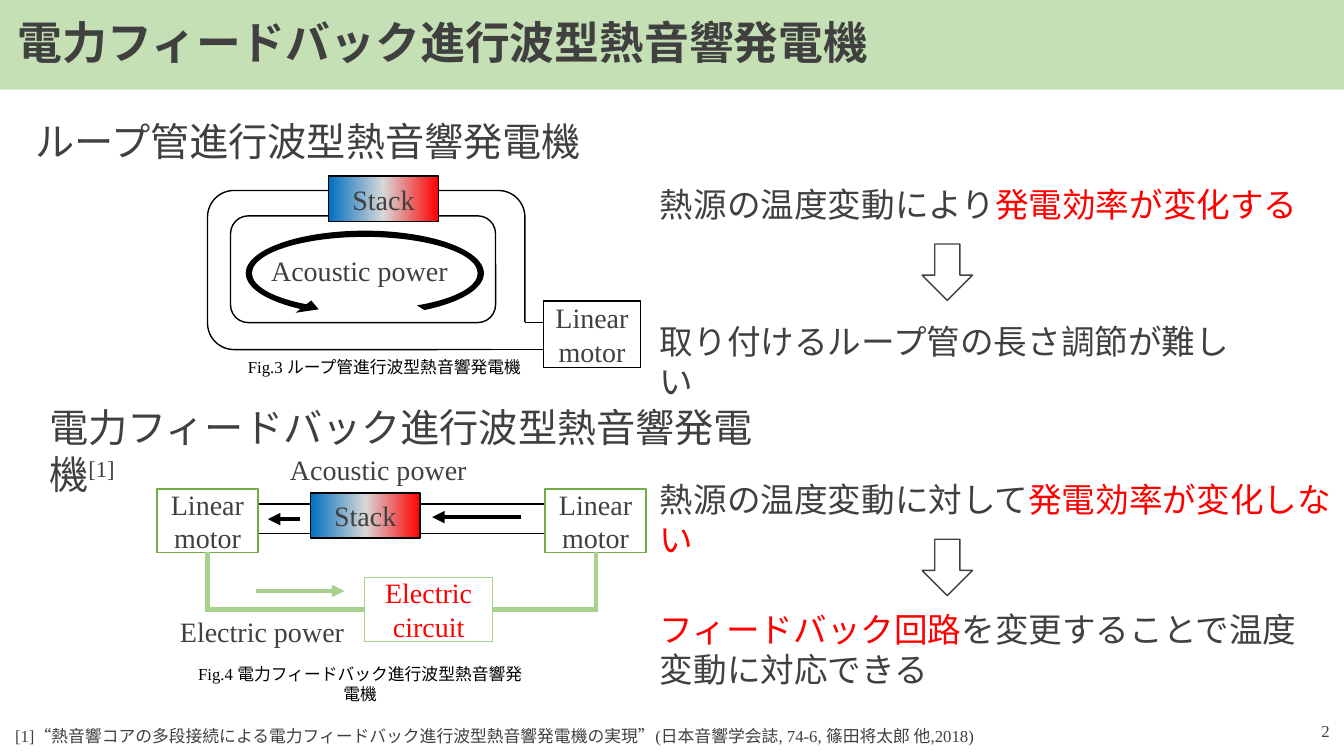
from copy import deepcopy

from lxml.etree import SubElement
from pptx import Presentation
from pptx.dml.color import RGBColor
from pptx.enum.shapes import MSO_CONNECTOR, MSO_SHAPE
from pptx.enum.text import MSO_ANCHOR, MSO_AUTO_SIZE, PP_ALIGN
from pptx.oxml.ns import qn
from pptx.util import Cm, Pt

LATIN, JAPANESE = "Times New Roman", "Noto Sans CJK JP"
GRAY, BLACK, WHITE, RED = "404040", "000000", "FFFFFF", "FF0000"
PALE_GREEN, WIRE_GREEN, MOTOR_GREEN = "C5E0B4", "A9D18E", "70AD47"
STACK_COLORS = ("0070C0", "D7D7D7", RED)
STACK_SIZE = (2.77, 1.14)


def color(value):
    return RGBColor.from_string(value)


def inside(box, x, y, width, height):
    """Box at an offset from the corner of another box, in cm."""
    return box[0] + x, box[1] + y, width, height


# Basic parts
def write(frame, lines, size, ink=GRAY, align=PP_ALIGN.LEFT, font=LATIN, bold=False):
    """Each line is a string or a list of (text, colour) runs."""
    frame.word_wrap = True
    for index, line in enumerate(lines):
        paragraph = frame.add_paragraph() if index else frame.paragraphs[0]
        paragraph.alignment = align
        paragraph.font.size = Pt(size)
        paragraph.font.bold = bold
        paragraph.font.color.rgb = color(ink)
        paragraph.font.name = font
        defaults = paragraph._p.pPr.find(qn("a:defRPr"))
        SubElement(defaults, qn("a:ea")).set("typeface", JAPANESE)
        for text, run_ink in [(line, ink)] if isinstance(line, str) else line:
            run = paragraph.add_run()
            run.text = text
            if run_ink != ink:
                run.font.color.rgb = color(run_ink)


def add_text(slide, box, line, size, **style):
    textbox = slide.shapes.add_textbox(*map(Cm, box))
    write(textbox.text_frame, [line], size, **style)
    textbox.text_frame.auto_size = MSO_AUTO_SIZE.SHAPE_TO_FIT_TEXT
    return textbox


def add_label(slide, box, line, size=20, ink=GRAY):
    return add_text(slide, box, line, size, ink=ink, align=PP_ALIGN.CENTER)


def add_block(slide, box, preset=MSO_SHAPE.RECTANGLE, fill=None, line=None,
              lines=(), ink=GRAY):
    shape = slide.shapes.add_shape(preset, *map(Cm, box))
    shape.shadow.inherit = False
    if fill:
        shape.fill.solid()
        shape.fill.fore_color.rgb = color(fill)
    else:
        shape.fill.background()
    if line:
        shape.line.color.rgb = color(line)
        shape.line.width = Pt(1)
    else:
        shape.line.fill.background()
    if lines:
        shape.text_frame.vertical_anchor = MSO_ANCHOR.MIDDLE
        write(shape.text_frame, lines, 20, ink=ink, align=PP_ALIGN.CENTER)
    return shape


def add_line(slide, box, start, end, ink=BLACK, width=1.0, arrow=False):
    points = (box[0] + start[0], box[1] + start[1], box[0] + end[0], box[1] + end[1])
    connector = slide.shapes.add_connector(MSO_CONNECTOR.STRAIGHT, *map(Cm, points))
    connector.line.color.rgb = color(ink)
    connector.line.width = Pt(width)
    if arrow:
        SubElement(connector.line._get_or_add_ln(), qn("a:tailEnd")).set("type", "triangle")
    SubElement(connector.element.spPr, qn("a:effectLst"))
    return connector


def add_motor(slide, box, line, fill=None):
    return add_block(slide, box, fill=fill, line=line, lines=["Linear", "motor"])


def add_stack(slide, box):
    stack = add_block(slide, box, line=BLACK, lines=["Stack"])
    stack.fill.gradient()
    stack.fill.gradient_angle = 0
    stop_list = stack.element.spPr.find(qn("a:gradFill")).find(qn("a:gsLst"))
    stop_list.insert(1, deepcopy(stop_list[0]))
    for index, stop in enumerate(stack.fill.gradient_stops):
        stop.color.rgb = color(STACK_COLORS[index])
        stop.position = index / 2


# Regions of the slide
def add_title_bar(slide, box, title):
    add_block(slide, box, fill=PALE_GREEN)
    add_text(slide, inside(box, 0.2, 0.25, 22.86, 1.63), title, 32,
             font=JAPANESE, bold=True)


def add_loop_diagram(slide, box, caption):
    motor_x = box[2] - 2.46
    mouth_top, tube_bottom = 3.33, 4.01
    # Looped tube, opened at its lower right corner
    for tube in ((0.58, 0.64, 6.68, 2.69), (0, 0, 8, tube_bottom)):
        add_block(slide, inside(box, *tube), MSO_SHAPE.ROUNDED_RECTANGLE, line=BLACK)
    add_block(slide, inside(box, 7.16, mouth_top, 1.4, 0.71), fill=WHITE, line=WHITE)
    add_motor(slide, inside(box, motor_x, 2.79, 2.46, 1.68), BLACK)
    add_stack(slide, inside(box, 3.05, -0.36, *STACK_SIZE))
    for x, y in ((7.14, tube_bottom), (8, mouth_top)):
        add_line(slide, box, (x, y), (motor_x, y))
    # Circulating power
    add_label(slide, inside(box, 1.14, 1.47, 5.38, 1.12), "Acoustic power")
    flow = add_block(slide, inside(box, 2.72, -1.09, 2.49, 6.35),
                     MSO_SHAPE.CIRCULAR_ARROW, fill=BLACK)
    for index, value in enumerate((0.063, 5.727, 179.133, 34.979, 0.101)):
        flow.adjustments[index] = value
    flow.rotation = 270
    flow.element.spPr.xfrm.set("flipH", "1")
    add_label(slide, inside(box, 0.74, 4.06, 7.44, 0.76), caption, 12, BLACK)


def add_feedback_diagram(slide, box, caption):
    right_x, wire_y = box[2] - 2.54, 4.08
    # Tube with a motor at each end
    add_block(slide, inside(box, 2.54, 1.42, 7.65, 0.74), line=BLACK)
    motors = [add_motor(slide, inside(box, x, 1.04, 2.54, 1.6), MOTOR_GREEN, fill)
              for x, fill in ((0, None), (right_x, WHITE))]
    add_stack(slide, inside(box, 3.86, 1.14, *STACK_SIZE))
    # Electric feedback
    circuit = add_block(slide, inside(box, 5.23, wire_y - 0.8, 3.23, 1.6),
                        line=WIRE_GREEN, lines=["Electric", "circuit"], ink=RED)
    wires = ((motors[0], 1.27, 5.23, 1), (motors[1], right_x + 1.27, 8.46, 3))
    for motor, x, circuit_x, side in wires:
        drop = add_line(slide, box, (x, 2.64), (x, wire_y + 0.05), WIRE_GREEN, 3)
        drop.begin_connect(motor, 2)
        wire = add_line(slide, box, (x, wire_y), (circuit_x, wire_y), WIRE_GREEN, 3)
        wire.end_connect(circuit, side)
    # Power flow arrows and labels
    for start_x, end_x, y, ink in ((9.17, 6.93, 1.75, BLACK), (3.61, 2.79, 1.8, BLACK),
                                   (2.49, 4.72, 3.61, WIRE_GREEN)):
        add_line(slide, box, (start_x, y), (end_x, y), ink, 3, arrow=True)
    add_label(slide, inside(box, 2.54, 0, 6.07, 1.12), "Acoustic power")
    add_label(slide, inside(box, -0.1, 4.09, 5.49, 1.12), "Electric power")
    add_label(slide, inside(box, 0.61, 5.31, 9.02, 0.76), caption, 12, BLACK)


def add_reasoning(slide, box, cause, result, result_size):
    add_text(slide, inside(box, 0, 0, box[2], 1.27), cause, 24)
    add_block(slide, inside(box, 6.86, 1.65, 1.27, 1.42), MSO_SHAPE.DOWN_ARROW,
              fill=WHITE, line=GRAY)
    add_text(slide, inside(box, 0, box[3] - result_size[1], *result_size), result, 24)


def add_footer(slide, box, reference, number):
    add_text(slide, inside(box, 0, 0.25, 25.81, 0.76), reference, 12)
    page = slide.shapes.add_textbox(*map(Cm, inside(box, box[2] - 7.62, 0, 7.62, 1.02)))
    page.text_frame.vertical_anchor = MSO_ANCHOR.MIDDLE
    write(page.text_frame, [number], 12, align=PP_ALIGN.RIGHT)


def main():
    presentation = Presentation()
    presentation.slide_width, presentation.slide_height = Cm(33.87), Cm(19.05)
    slide = presentation.slides.add_slide(presentation.slide_layouts[6])
    loop, feedback = "ループ管進行波型熱音響発電機", "電力フィードバック進行波型熱音響発電機"

    add_title_bar(slide, (0, 0, 33.87, 2.26), feedback)
    add_text(slide, (0.64, 2.82, 15.29, 1.45), loop, 28)
    heading = add_text(slide, (0.99, 10.03, 18.9, 1.45),
                       [(feedback, GRAY), ("[1]", GRAY)], 28)
    citation = heading.text_frame.paragraphs[0].runs[1]
    citation._r.get_or_add_rPr().set("baseline", "30000")

    add_loop_diagram(slide, (5.23, 4.8, 10.92, 4.47), "Fig.3 " + loop)
    add_feedback_diagram(slide, (3.96, 11.28, 12.32, 6.07), "Fig.4 " + feedback)
    add_reasoning(slide, (16.38, 4.5, 17.32, 4.72),
                  [("熱源の温度変動により", GRAY), ("発電効率が変化する", RED)],
                  "取り付けるループ管の長さ調節が難しい", (15.44, 1.27))
    add_reasoning(slide, (16.38, 11.94, 18.01, 5.58),
                  [("熱源の温度変動に対して", GRAY), ("発電効率が変化しない", RED)],
                  [("フィードバック回路", RED), ("を変更することで温度変動に対応できる", GRAY)],
                  (16.66, 2.31))
    add_footer(slide, (0.13, 17.91, 33.63, 1.02),
               "[1]“熱音響コアの多段接続による電力フィードバック進行波型熱音響発電機の実現”"
               "(日本音響学会誌, 74-6, 篠田将太郎 他,2018)", "2")
    presentation.save("out.pptx")


if __name__ == "__main__":
    main()
